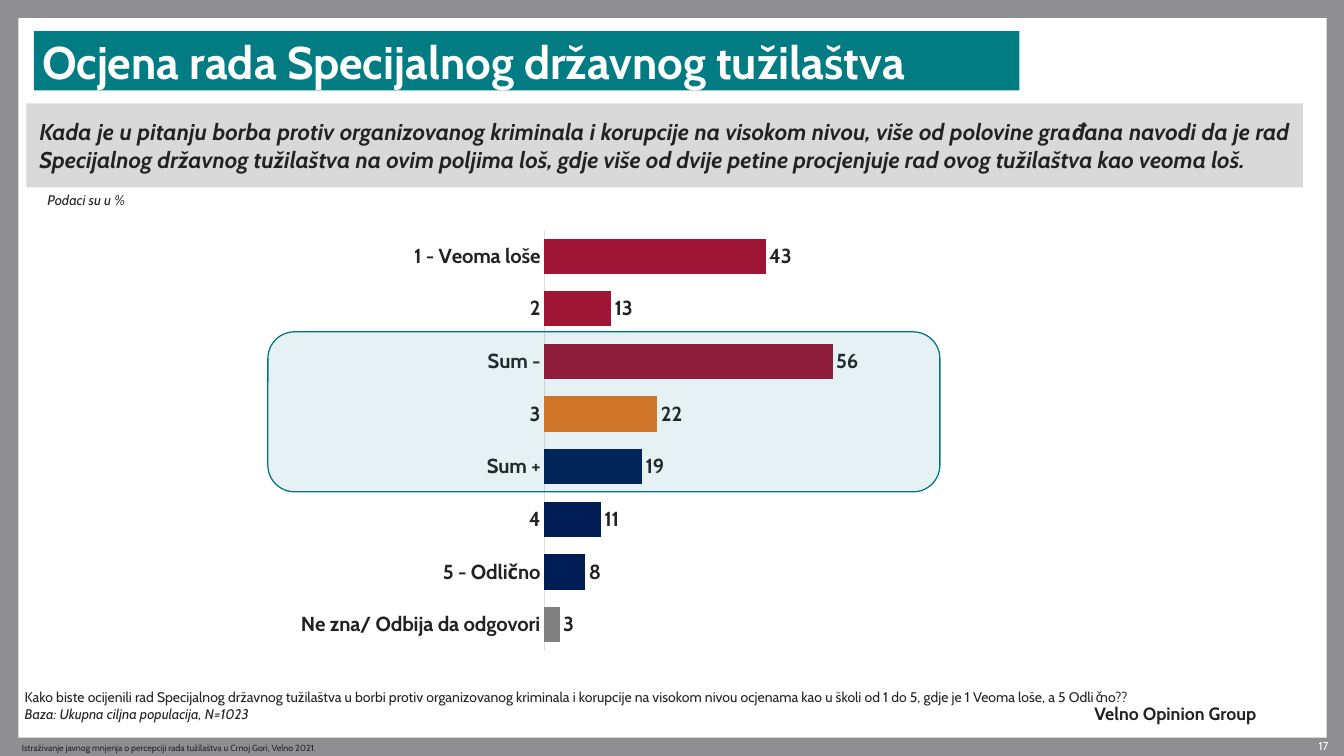
from lxml import etree
from pptx import Presentation
from pptx import util as u
from pptx.chart.data import CategoryChartData
from pptx.dml.color import RGBColor
from pptx.enum import chart as ch, shapes, text
from pptx.oxml import parse_xml
from pptx.oxml.ns import nsdecls, qn

PX = 9144  # 100 px to the inch
FONT = "Cabin"
INK, WHITE, TEAL = "222223", "FFFFFF", "007C82"
RED, ORANGE, NAVY, GREY = "9F1535", "E87722", "001C54", "808080"
LEFT, RIGHT, EVEN = text.PP_ALIGN.LEFT, text.PP_ALIGN.RIGHT, text.PP_ALIGN.JUSTIFY
TOP, MIDDLE = text.MSO_ANCHOR.TOP, text.MSO_ANCHOR.MIDDLE

SCORES = [
    ("1 - Veoma loše", 43, RED),
    ("2", 13, RED),
    ("Sum -", 56, RED),
    ("3", 22, ORANGE),
    ("Sum +", 19, NAVY),
    ("4", 11, NAVY),
    ("5 - Odlično", 8, NAVY),
    ("Ne zna/ Odbija da odgovori", 3, GREY),
]
SUMMARY = (
    "Kada je u pitanju borba protiv organizovanog kriminala i korupcije na visokom "
    "nivou, više od polovine građana navodi da je rad Specijalnog državnog tužilaštva "
    "na ovim poljima loš, gdje više od dvije petine procjenjuje rad ovog tužilaštva "
    "kao veoma loš."
)
QUESTION = (
    "Kako biste ocijenili rad Specijalnog državnog tužilaštva u borbi protiv "
    "organizovanog kriminala i korupcije na visokom nivou ocjenama kao u školi "
    "od 1 do 5, gdje je 1 Veoma loše, a 5 Odlično??"
)


def color(code):
    return RGBColor.from_string(code)


def emu(box):
    return [n * PX for n in box]


def paint(shape, code):
    shape.fill.solid()
    shape.fill.fore_color.rgb = color(code)


def style(font, size, code=INK, **looks):
    looks = {"name": FONT, "size": u.Pt(size), **looks}
    for key, value in looks.items():
        setattr(font, key, value)
    font.color.rgb = color(code)


def write(shape, lines, size, code=INK, align=LEFT, anchor=TOP, wrap=True, pad=(0, 0), **looks):
    """Fill a shape with lines; pad is the side and the top inset in px."""
    frame = shape.text_frame
    side, top = emu(pad)
    form = {
        "margin_left": side, "margin_right": side,
        "margin_top": top, "margin_bottom": top,
        "word_wrap": wrap, "vertical_anchor": anchor,
        "auto_size": text.MSO_AUTO_SIZE.NONE,
    }
    for key, value in form.items():
        setattr(frame, key, value)
    frame.text = "\n".join(lines)
    for para in frame.paragraphs:
        para.alignment = align
        style(para.font, size, code, **looks)


def label(slide, box, lines, size, **form):
    shape = slide.shapes.add_textbox(*emu(box))
    write(shape, lines, size, **form)
    return shape


def block(slide, box, fill, kind=shapes.MSO_SHAPE.RECTANGLE):
    shape = slide.shapes.add_shape(kind, *emu(box))
    shape.shadow.inherit = False
    paint(shape, fill)
    shape.line.fill.background()
    return shape


def head(slide):
    title = slide.shapes.title
    title.left, title.top, title.width, title.height = emu((37, 34, 1078, 65))
    paint(title, TEAL)
    write(title, ["Ocjena rada Specijalnog državnog tužilaštva"], 36, WHITE,
          anchor=MIDDLE, pad=(9, 2), bold=True)


def place(chart, x, y, w, h):
    """Fix the inner plot area, in shares of the chart."""
    area = chart._chartSpace.chart.plotArea
    for old in area.findall(qn("c:layout")):
        area.remove(old)
    parts = {"layoutTarget": "inner", "xMode": "edge", "yMode": "edge",
             "x": x, "y": y, "w": w, "h": h}
    marks = "".join(f'<c:{key} val="{value}"/>' for key, value in parts.items())
    area.insert(0, parse_xml(
        f'<c:layout {nsdecls("c")}><c:manualLayout>{marks}</c:manualLayout></c:layout>'))


def bars(slide, box):
    data = CategoryChartData()
    names, values, fills = zip(*SCORES)
    data.categories = names
    data.add_series("Ocjena", values)
    chart = slide.shapes.add_chart(ch.XL_CHART_TYPE.BAR_CLUSTERED, *emu(box), data).chart
    chart.has_legend = chart.has_title = False
    style(chart.font, 16, bold=True)
    place(chart, 0.49, 0.03, 0.46, 0.96)

    axis = chart.category_axis
    axis.reverse_order = True
    axis.major_tick_mark = ch.XL_TICK_MARK.NONE
    axis.format.line.color.rgb = color("DDDDDE")
    axis.format.line.width = u.Pt(0.75)
    style(axis.tick_labels.font, 16, bold=True)
    scale = chart.value_axis
    scale.minimum_scale, scale.maximum_scale = 0, 60
    scale.has_major_gridlines = scale.visible = False

    plot = chart.plots[0]
    plot.gap_width = 50
    plot.vary_by_categories = False
    series = plot.series[0]
    paint(series.format, RED)
    for i, fill in enumerate(fills):
        paint(series.points[i].format, fill)
    tags = series.data_labels
    tags.show_value = True
    tags.position = ch.XL_LABEL_POSITION.OUTSIDE_END
    style(tags.font, 16, bold=True)


def frame(slide, box):
    """Mark the summed rows with a see-through rounded frame."""
    shape = block(slide, box, "007681", shapes.MSO_SHAPE.ROUNDED_RECTANGLE)
    shape.line.color.rgb = color("007681")
    shape.line.width = u.Pt(1)
    tint = shape._element.spPr.find(qn("a:solidFill"))[0]
    etree.SubElement(tint, qn("a:alpha")).set("val", "10000")


def main():
    deck = Presentation()
    deck.slide_width, deck.slide_height = emu((1470, 827))
    slide = deck.slides.add_slide(deck.slide_layouts[5])
    paint(slide.background, "8F8F92")
    page = block(slide, (20, 20, 1431, 787), WHITE)
    slide.shapes._spTree.insert(2, page._element)  # behind the title

    head(slide)
    label(slide, (1406, 809, 47, 17), ["17"], 9, code=WHITE, align=RIGHT)
    label(slide, (1197, 769, 209, 24), ["Velno Opinion Group"], 14, bold=True)
    label(slide, (24, 809, 486, 18),
          ["Istraživanje javnog mnjenja o percepciji rada tužilaštva u Crnoj Gori, Velno 2021."],
          7, anchor=MIDDLE, wrap=False)
    label(slide, (42, 205, 134, 29), ["Podaci su u %"], 11, pad=(10, 5), italic=True)
    band = block(slide, (29, 113, 1396, 92), "D9D9D9")
    write(band, [SUMMARY], 18, align=EVEN, anchor=MIDDLE, pad=(14, 0), bold=True, italic=True)
    note = label(slide, (27, 747, 1000, 50),
                 [QUESTION, "Baza: Ukupna ciljna populacija, N=1023"],
                 11, anchor=MIDDLE, wrap=False)
    note.text_frame.paragraphs[1].font.italic = True

    bars(slide, (235, 237, 735, 480))
    frame(slide, (293, 363, 735, 175))
    deck.save("out.pptx")


if __name__ == "__main__":
    main()
